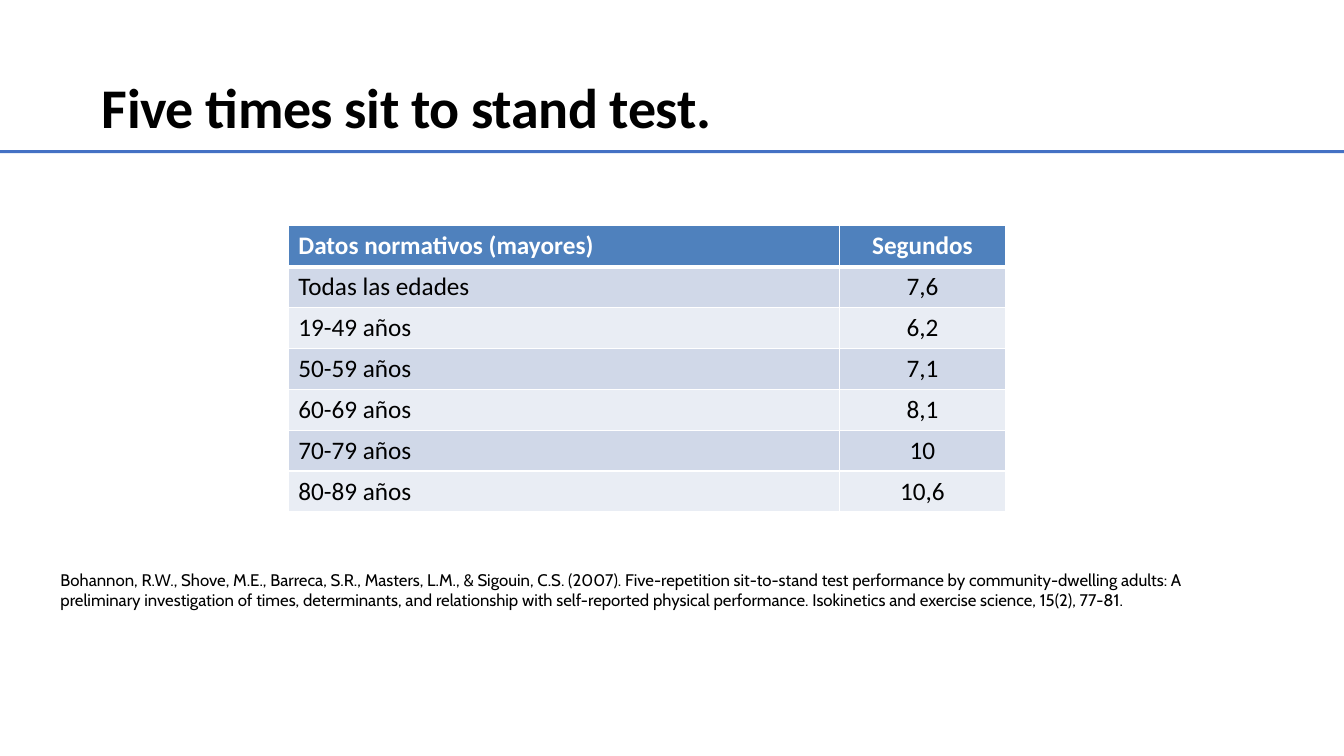
from lxml import etree
from pptx import Presentation
from pptx.dml.color import RGBColor
from pptx.enum.shapes import MSO_SHAPE
from pptx.enum.text import PP_ALIGN
from pptx.oxml.ns import qn
from pptx.util import Emu, Pt

RECTANGLE = MSO_SHAPE.RECTANGLE
LEFT, CENTER = PP_ALIGN.LEFT, PP_ALIGN.CENTER
EMU_PER_PX = 9144  # 100 px to the inch
EMU_PER_POINT = 12700

COLORS = {
    "text": "000000",
    "white": "FFFFFF",
    "rule": "4471C4",
    "header": "4F81BD",
    "odd_row": "D0D8E8",
    "even_row": "E9EDF4",
}

TITLE = "Five times sit to stand test."
REFERENCE = (
    "Bohannon, R.W., Shove, M.E., Barreca, S.R., Masters, L.M., & Sigouin, C.S. (2007). "
    "Five-repetition sit-to-stand test performance by community-dwelling adults: "
    "A preliminary investigation of times, determinants, and relationship with "
    "self-reported physical performance. Isokinetics and exercise science, 15(2), 77-81."
)
NORMS = [
    ("Datos normativos (mayores)", "Segundos"),
    ("Todas las edades", "7,6"),
    ("19-49 años", "6,2"),
    ("50-59 años", "7,1"),
    ("60-69 años", "8,1"),
    ("70-79 años", "10"),
    ("80-89 años", "10,6"),
]


def px(length):
    return Emu(length * EMU_PER_PX)


def color(name):
    return RGBColor.from_string(COLORS[name])


class SlideBuilder:
    def __init__(self, slide):
        self.slide = slide

    def run(self, paragraph, text, font, size, color_name="text", bold=False):
        run = paragraph.add_run()
        run.text = text
        run.font.name = font
        run.font.size = Pt(size)
        run.font.bold = bold
        run.font.color.rgb = color(color_name)
        return run

    def text(self, box, text, font, size, bold=False, indent=0, spacing=0):
        """Add a text box; spacing is the letter spacing in hundredths of a point."""
        frame = self.slide.shapes.add_textbox(*map(px, box)).text_frame
        frame.word_wrap = True
        frame.margin_left = frame.margin_right = frame.margin_bottom = 0
        frame.margin_top = px(1)
        paragraph = frame.paragraphs[0]
        if indent:
            paragraph._p.get_or_add_pPr().set("marL", str(px(indent)))
        run = self.run(paragraph, text, font, size, bold=bold)
        if spacing:
            run.font._element.set("spc", str(spacing))

    def bar(self, box, color_name):
        shape = self.slide.shapes.add_shape(RECTANGLE, *map(px, box))
        shape.shadow.inherit = False
        shape.fill.solid()
        shape.fill.fore_color.rgb = color(color_name)
        shape.line.fill.background()

    def borders(self, cell, bottom_width):
        properties = cell._tc.get_or_add_tcPr()
        widths = {"a:lnL": 1, "a:lnR": 1, "a:lnT": 1, "a:lnB": bottom_width}
        for tag, width in widths.items():
            line = etree.SubElement(properties, qn(tag), w=str(width * EMU_PER_POINT))
            fill = etree.SubElement(line, qn("a:solidFill"))
            etree.SubElement(fill, qn("a:srgbClr"), val=COLORS["white"])

    def table(self, box, rows, column_widths, alignments, font, size):
        """Add a table with a bold header row and alternating row fills."""
        frame = self.slide.shapes.add_table(len(rows), len(column_widths), *map(px, box))
        table = frame.table
        for column, width in zip(table.columns, column_widths):
            column.width = px(width)
        for row_index, values in enumerate(rows):
            header = row_index == 0
            fill_name = "header" if header else "odd_row" if row_index % 2 else "even_row"
            for column_index, value in enumerate(values):
                cell = table.cell(row_index, column_index)
                self.borders(cell, 3 if header else 1)
                cell.fill.solid()
                cell.fill.fore_color.rgb = color(fill_name)
                paragraph = cell.text_frame.paragraphs[0]
                paragraph.alignment = alignments[column_index]
                self.run(paragraph, value, font, size, "white" if header else "text", header)


def main():
    presentation = Presentation()
    presentation.slide_width, presentation.slide_height = px(1333), px(750)
    builder = SlideBuilder(presentation.slides.add_slide(presentation.slide_layouts[6]))
    builder.text((100, 71, 1024, 70), TITLE, "Calibri", 40, bold=True, indent=1, spacing=-30)
    builder.bar((0, 149, 1333, 3), "rule")
    builder.text((60, 564, 1163, 42), REFERENCE, "Cabin", 12)
    builder.table((286, 224, 711, 284), NORMS, (547, 164), (LEFT, CENTER), "Calibri", 18)
    presentation.save("out.pptx")


if __name__ == "__main__":
    main()
